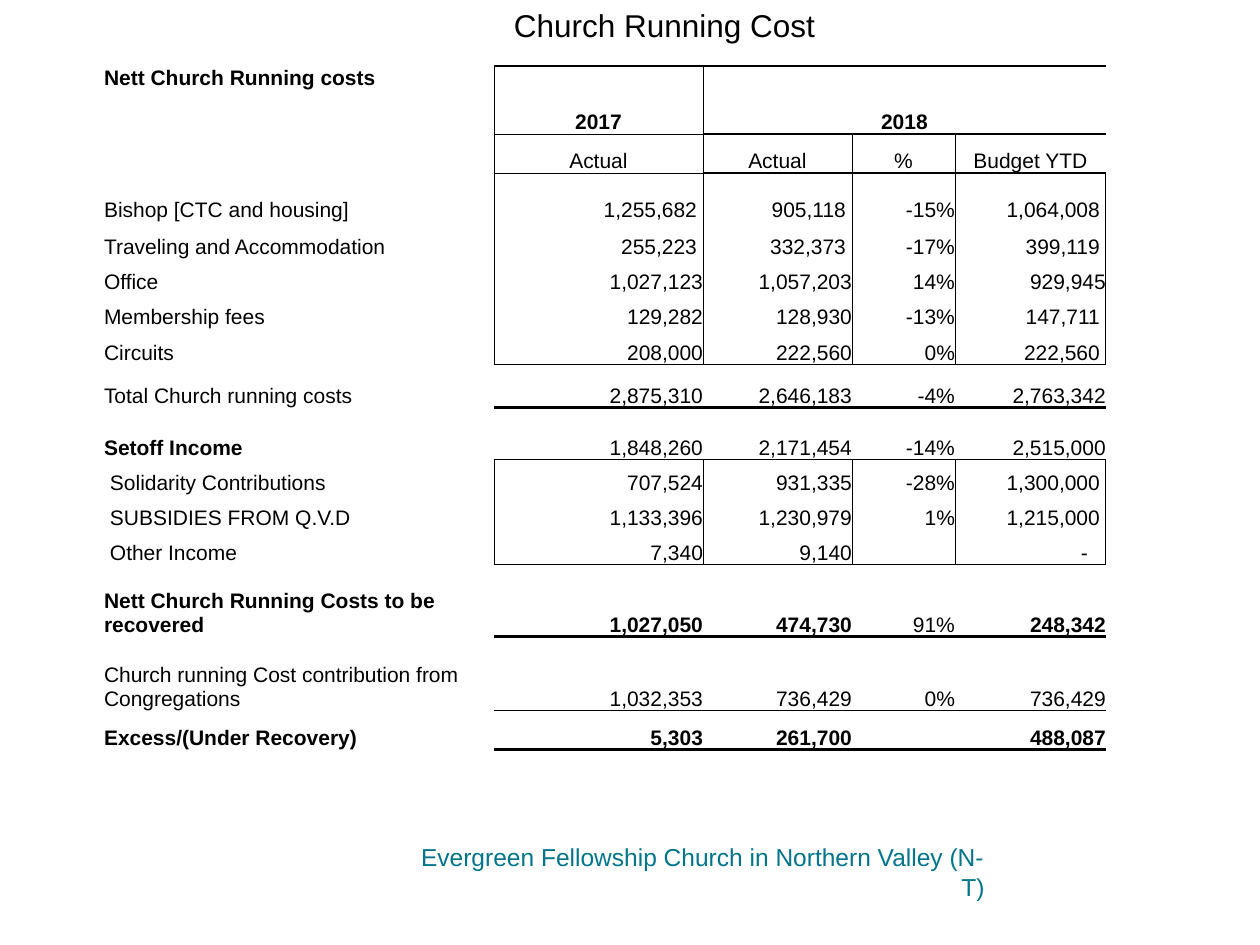
from lxml.etree import SubElement as Sub
from pptx import Presentation
from pptx.dml.color import RGBColor
from pptx.enum.text import MSO_ANCHOR as Anchor, MSO_AUTO_SIZE as Fit, PP_ALIGN as Align
from pptx.oxml.ns import qn
from pptx.util import Pt

PX = 914400 / 126
BLACK = RGBColor(0, 0, 0)
TEAL = RGBColor(0x00, 0x75, 0x8C)
COLS = [390, 209, 149, 103, 151]
TALLS = [68, 39, 49, 37, 35, 35, 36, 43, 52, 35, 35, 35, 72, 74, 39]
ROWS = [
    ["Nett Church Running costs", "2017", "2018", "", ""],
    ["", "Actual", "Actual", "%", "Budget YTD"],
    ["Bishop [CTC and housing]", "1,255,682", "905,118", "-15%", "1,064,008"],
    ["Traveling and Accommodation", "255,223", "332,373", "-17%", "399,119"],
    ["Office", "1,027,123", "1,057,203", "14%", "929,945"],
    ["Membership fees", "129,282", "128,930", "-13%", "147,711"],
    ["Circuits", "208,000", "222,560", "0%", "222,560"],
    ["Total Church running costs", "2,875,310", "2,646,183", "-4%", "2,763,342"],
    ["Setoff Income", "1,848,260", "2,171,454", "-14%", "2,515,000"],
    ["Solidarity Contributions", "707,524", "931,335", "-28%", "1,300,000"],
    ["SUBSIDIES FROM Q.V.D", "1,133,396", "1,230,979", "1%", "1,215,000"],
    ["Other Income", "7,340", "9,140", "", "-"],
    ["Nett Church Running Costs to be recovered", "1,027,050", "474,730", "91%", "248,342"],
    ["Church running Cost contribution from Congregations", "1,032,353", "736,429", "0%", "736,429"],
    ["Excess/(Under Recovery)", "5,303", "261,700", "", "488,087"],
]
HEAD = (0, 1)
BOXED = (2, 3, 4, 5, 6, 9, 10, 11)
ITEMS = (9, 10, 11)
BOLD = (0, 12, 14)
RULES = {0: 1, 1: 1, 2: 1, 7: 0.5, 8: 2, 9: 0.5, 12: 0.5, 13: 2, 14: 0.5, 15: 2}
PADS = {2: (1, 2, 4), 3: (1, 2, 4), 5: (4,), 6: (4,), 9: (4,), 10: (4,), 11: (4,)}


def px(n):
    return round(n * PX)


def style(item, form):
    for key, value in form.items():
        setattr(item, key, value)


def write(frame, text, size, color, align, bold=False):
    para = frame.paragraphs[0]
    para.alignment = align
    if not text:
        Sub(para._p, qn("a:endParaRPr"), sz=str(size * 100))
        return
    run = para.add_run()
    run.text = text
    style(run.font, {"name": "Arial", "size": Pt(size), "bold": bold})
    run.font.color.rgb = color


def place(shape, left, top, width, height):
    style(shape, {"left": px(left), "top": px(top),
                  "width": px(width), "height": px(height)})
    style(shape.text_frame, {"word_wrap": True, "auto_size": Fit.NONE,
                             "vertical_anchor": Anchor.TOP})


def weigh(row, col):
    rule = RULES.get(row, 0)
    return 0.5 if col == 1 and row in (1, 2) else rule


def edges(row, col):
    sides = {"L": 0, "R": 0, "T": 0, "B": 0}
    if col:
        sides.update(T=weigh(row, col), B=weigh(row + 1, col))
    if row in BOXED:
        sides.update(L=0.5 if col else 0, R=0.5)
    elif row in HEAD:
        sides.update(L=0.5 if col else 0, R=0.5 if col < 4 - 2 * (row == 0) else 0)
    return sides


def border(cell, sides):
    props = cell._tc.get_or_add_tcPr()
    for side, size in sides.items():
        line = Sub(props, qn("a:ln" + side), w=str(Pt(size)))
        if size:
            fill = Sub(line, qn("a:solidFill"))
            Sub(fill, qn("a:srgbClr"), val=str(BLACK))
        else:
            Sub(line, qn("a:noFill"))


def fill_cell(cell, row, col, text):
    left = 6 if col == 0 and row in ITEMS else 0
    right = 6 if col in PADS.get(row, ()) else 0
    if text == "-":
        right = 18
    style(cell, {"margin_left": px(left), "margin_right": px(right),
                 "margin_top": 0, "margin_bottom": 0,
                 "vertical_anchor": Anchor.BOTTOM if row or col else Anchor.TOP})
    if col == 0:
        align = Align.LEFT
    else:
        align = Align.CENTER if row in HEAD else Align.RIGHT
    bold = (row in BOLD and col != 3) or (row, col) == (8, 0)
    write(cell.text_frame, text, 12, BLACK, align, bold)
    border(cell, edges(row, col))
    cell.fill.background()


def add_costs(slide):
    table = slide.shapes.add_table(len(ROWS), len(COLS), px(104), px(66),
                                   px(sum(COLS)), px(sum(TALLS))).table
    style(table, {"first_row": False, "horz_banding": False})
    for col, wide in zip(table.columns, COLS):
        col.width = px(wide)
    for row, tall in zip(table.rows, TALLS):
        row.height = px(tall)
    for r, texts in enumerate(ROWS):
        for c, text in enumerate(texts):
            fill_cell(table.cell(r, c), r, c, text)
    table.cell(0, 2).merge(table.cell(0, 4))


def main():
    deck = Presentation()
    style(deck, {"slide_width": px(1260), "slide_height": px(945)})
    slide = deck.slides.add_slide(deck.slide_layouts[5])
    title = slide.shapes.title
    place(title, 243, 0, 843, 50)
    write(title.text_frame, "Church Running Cost", 18, BLACK, Align.CENTER)
    church = slide.shapes.add_textbox(0, 0, 0, 0)
    place(church, 392, 836, 605, 43)
    write(church.text_frame, "Evergreen Fellowship Church in Northern Valley (N-T)",
          14, TEAL, Align.RIGHT)
    add_costs(slide)
    deck.save("out.pptx")


if __name__ == "__main__":
    main()
